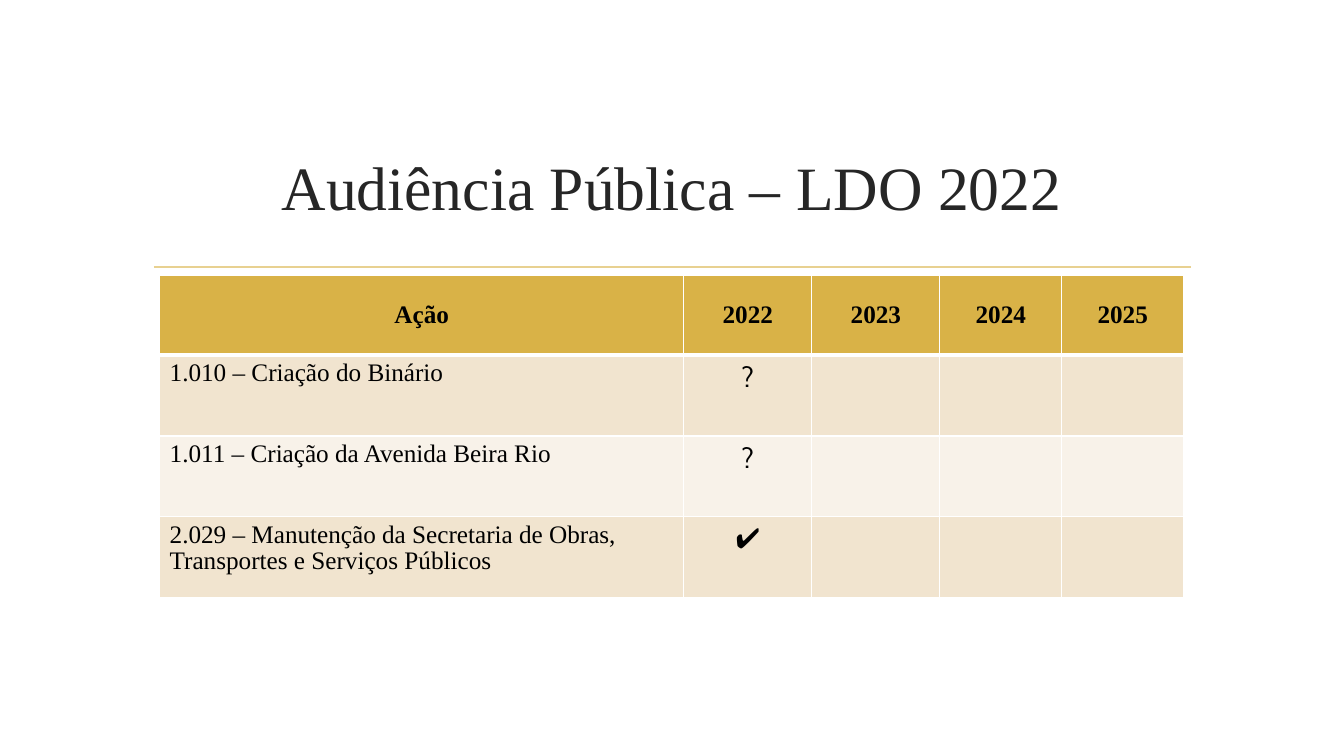
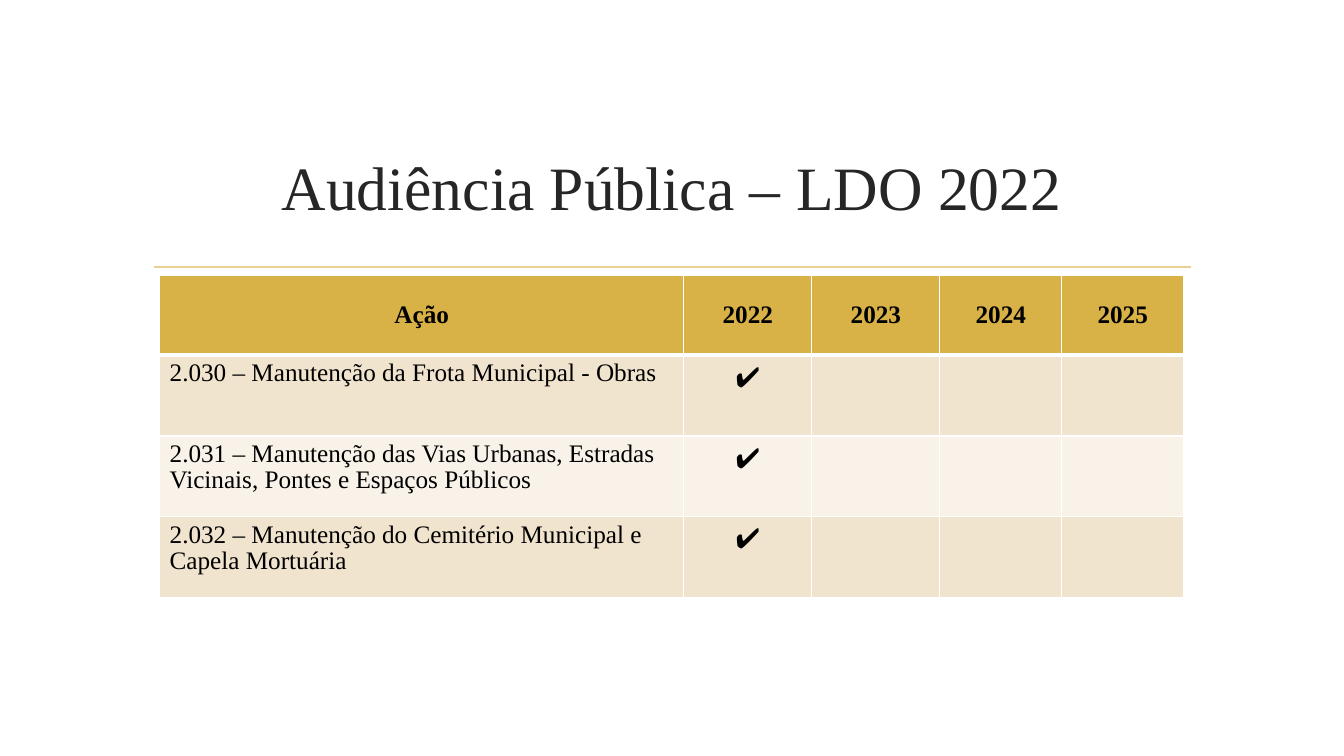
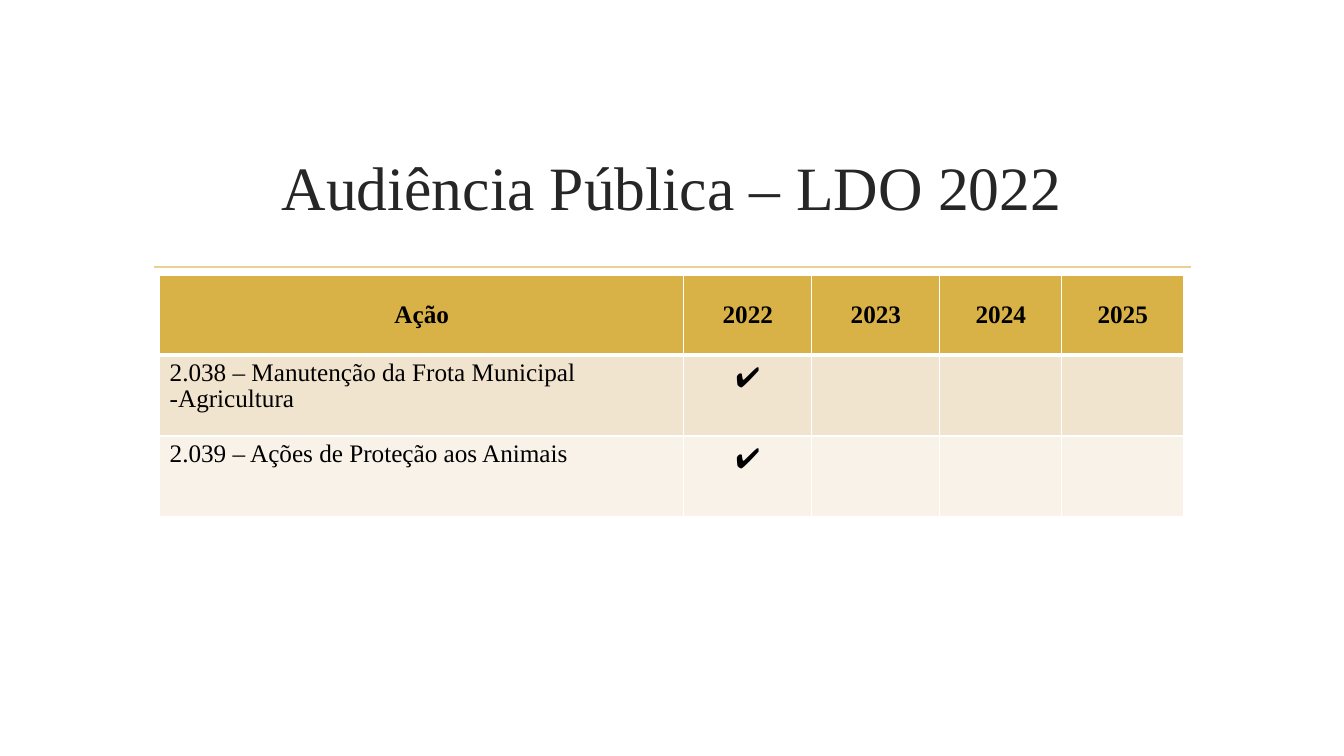
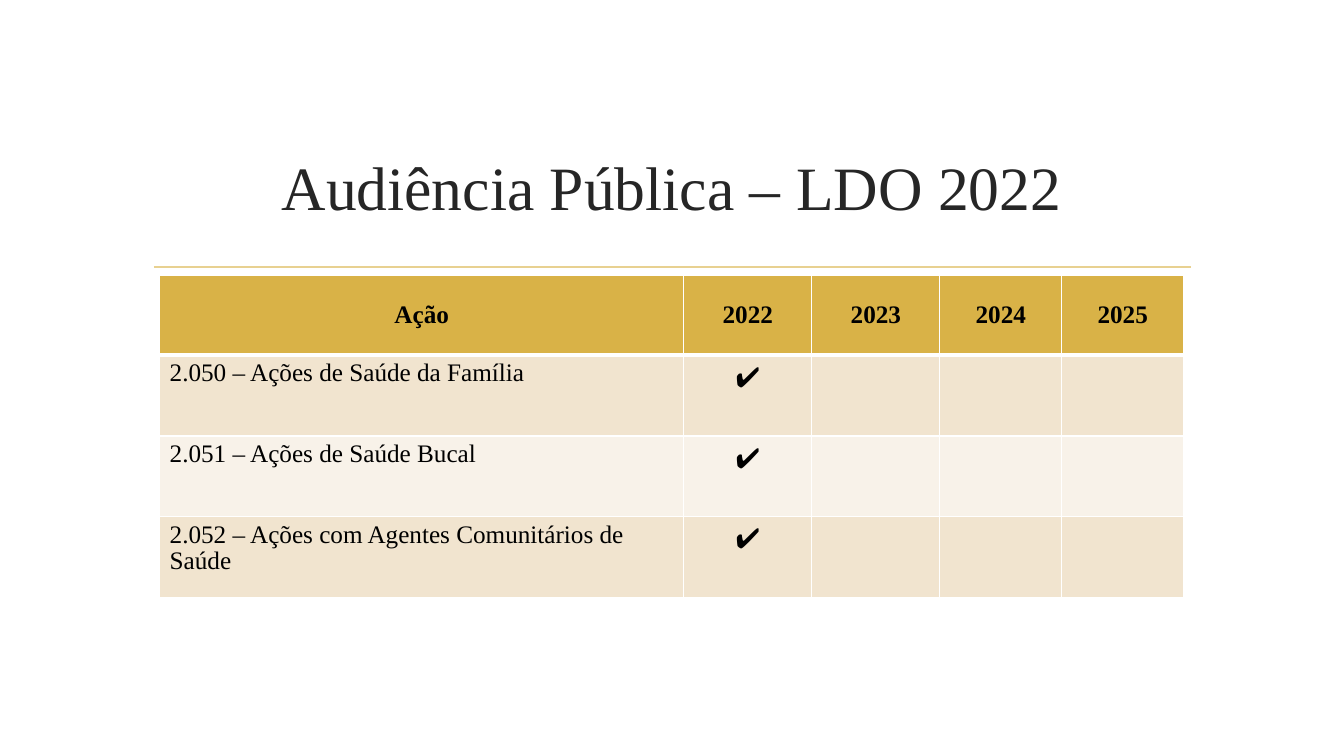
from dataclasses import dataclass

from lxml.etree import SubElement
from pptx import Presentation
from pptx.dml.color import RGBColor
from pptx.enum.shapes import MSO_CONNECTOR
from pptx.enum.text import MSO_ANCHOR, PP_ALIGN
from pptx.oxml.ns import qn
from pptx.slide import Slide
from pptx.table import _Cell
from pptx.text.text import TextFrame
from pptx.util import Pt

TITLE = "Audiência Pública – LDO 2022"
HEADINGS = ("Ação", "2022", "2023", "2024", "2025")
COLUMN_WIDTHS = (374.4, 91.5, 91.5, 87.1, 87.1)
HEADER_HEIGHT, ROW_HEIGHT = 57, 57.8
TABLE_LEFT, TABLE_TOP = 114, 196.6
RULE_LEFT, RULE_RIGHT, RULE_TOP = 110, 850.5, 190.8
GOLD, PALE_GOLD, WHITE = "D9B247", "E8D191", "FFFFFF"
BANDS = ("F1E4CF", "F8F2E9")


@dataclass(frozen=True)
class TextStyle:
    size: float
    font: str = "Times New Roman"
    color: str = "000000"
    bold: bool = False
    alignment: PP_ALIGN = PP_ALIGN.CENTER
    line_spacing: float = 1.0


@dataclass(frozen=True)
class Action:
    name: str
    mark: str = "✔"


TITLE_STYLE = TextStyle(44, color="262626")
HEADING_STYLE = TextStyle(18, bold=True)
ACTION_STYLE = TextStyle(18, alignment=PP_ALIGN.LEFT, line_spacing=0.95)
MARK_STYLE = TextStyle(20, font="Cabin")

SLIDES = (
    (
        Action("1.010 – Criação do Binário", "?"),
        Action("1.011 – Criação da Avenida Beira Rio", "?"),
        Action("2.029 – Manutenção da Secretaria de Obras, Transportes e Serviços Públicos"),
    ),
    (
        Action("2.030 – Manutenção da Frota Municipal - Obras"),
        Action("2.031 – Manutenção das Vias Urbanas, Estradas Vicinais, Pontes e Espaços Públicos"),
        Action("2.032 – Manutenção do Cemitério Municipal e Capela Mortuária"),
    ),
    (
        Action("2.038 – Manutenção da Frota Municipal -Agricultura"),
        Action("2.039 – Ações de Proteção aos Animais"),
    ),
    (
        Action("2.050 – Ações de Saúde da Família"),
        Action("2.051 – Ações de Saúde Bucal"),
        Action("2.052 – Ações com Agentes Comunitários de Saúde"),
    ),
)


def rgb(color: str) -> RGBColor:
    return RGBColor.from_string(color)


def write_text(frame: TextFrame, text: str, style: TextStyle) -> None:
    paragraph = frame.paragraphs[0]
    paragraph.alignment = style.alignment
    paragraph.line_spacing = style.line_spacing
    run = paragraph.add_run()
    run.text = text
    run.font.color.rgb = rgb(style.color)
    formats = {"size": Pt(style.size), "name": style.font, "bold": style.bold}
    for name, value in formats.items():
        setattr(run.font, name, value)


def add_title(slide: Slide) -> None:
    box = slide.shapes.add_textbox(Pt(102), Pt(77), Pt(756), Pt(103))
    frame = box.text_frame
    formats = {
        "word_wrap": True,
        "vertical_anchor": MSO_ANCHOR.MIDDLE,
        "margin_top": Pt(11.6),
    }
    for name, value in formats.items():
        setattr(frame, name, value)
    write_text(frame, TITLE, TITLE_STYLE)


def add_rule(slide: Slide) -> None:
    rule = slide.shapes.add_connector(
        MSO_CONNECTOR.STRAIGHT, Pt(RULE_LEFT), Pt(RULE_TOP), Pt(RULE_RIGHT), Pt(RULE_TOP)
    )
    rule.line.color.rgb = rgb(PALE_GOLD)
    rule.line.width = Pt(1.25)
    SubElement(rule._element.spPr, qn("a:effectLst"))


def set_borders(cell: _Cell, top: float, bottom: float) -> None:
    """Give the cell white borders; the side borders are 1 point wide."""
    properties = cell._tc.get_or_add_tcPr()
    widths = {"a:lnL": 1, "a:lnR": 1, "a:lnT": top, "a:lnB": bottom}
    for position, (tag, width) in enumerate(widths.items()):
        line = SubElement(properties, qn(tag), w=str(Pt(width)))
        fill = SubElement(line, qn("a:solidFill"))
        SubElement(fill, qn("a:srgbClr"), val=WHITE)
        properties.insert(position, line)


def add_action_table(slide: Slide, actions: tuple[Action, ...]) -> None:
    height = HEADER_HEIGHT + ROW_HEIGHT * len(actions)
    table = slide.shapes.add_table(
        len(actions) + 1, len(HEADINGS),
        Pt(TABLE_LEFT), Pt(TABLE_TOP), Pt(sum(COLUMN_WIDTHS)), Pt(height),
    ).table
    for column, width in zip(table.columns, COLUMN_WIDTHS):
        column.width = Pt(width)

    texts = [HEADINGS] + [(action.name, action.mark) for action in actions]
    for row_index, row in enumerate(table.rows):
        is_header = row_index == 0
        row.height = Pt(HEADER_HEIGHT if is_header else ROW_HEIGHT)
        color = GOLD if is_header else BANDS[(row_index - 1) % len(BANDS)]
        for cell in row.cells:
            cell.fill.solid()
            cell.fill.fore_color.rgb = rgb(color)
            cell.vertical_anchor = MSO_ANCHOR.MIDDLE if is_header else MSO_ANCHOR.TOP
            set_borders(cell, 3 if row_index == 1 else 1, 3 if is_header else 1)
        styles = [HEADING_STYLE] * len(HEADINGS) if is_header else [ACTION_STYLE, MARK_STYLE]
        for cell, text, style in zip(row.cells, texts[row_index], styles):
            write_text(cell.text_frame, text, style)


def main() -> None:
    presentation = Presentation()
    presentation.slide_width, presentation.slide_height = Pt(960), Pt(540)
    blank_layout = presentation.slide_layouts[6]
    for actions in SLIDES:
        slide = presentation.slides.add_slide(blank_layout)
        add_rule(slide)
        add_title(slide)
        add_action_table(slide, actions)
    presentation.save("out.pptx")


if __name__ == "__main__":
    main()
